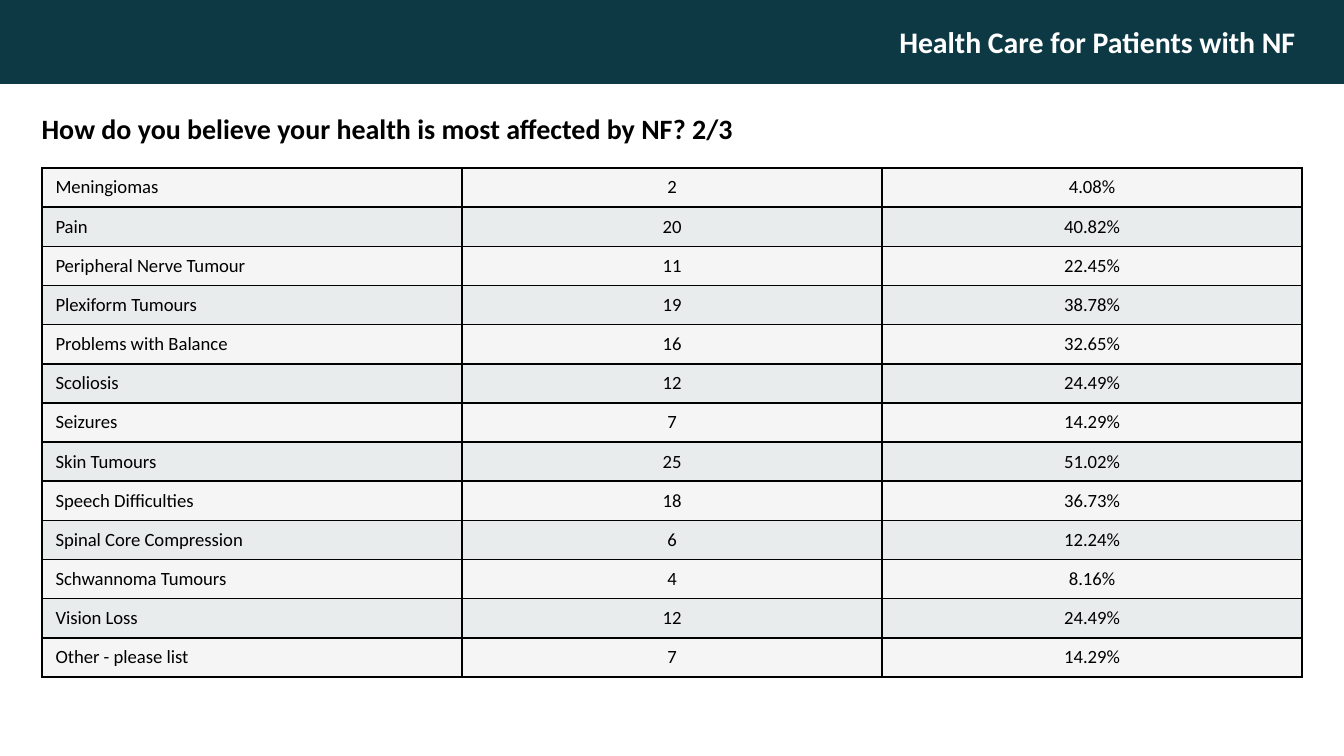
from dataclasses import dataclass

from lxml.etree import SubElement
from pptx import Presentation
from pptx.dml.color import RGBColor
from pptx.enum.shapes import MSO_SHAPE
from pptx.enum.text import MSO_ANCHOR, PP_ALIGN
from pptx.oxml.ns import qn
from pptx.util import Inches, Pt

WIDE = Inches(10)
HIGH = WIDE * 9 // 16
FONT = "Calibri"
HEX = {"band": "0D3944", "odd": "F5F5F5", "even": "E8ECED",
       "ink": "000000", "page": "FFFFFF"}
TOTAL = 49  # people who answered


@dataclass
class Answer:
    label: str
    count: int

    def texts(self) -> list[str]:
        return [self.label, str(self.count), f"{self.count / TOTAL:.2%}"]


@dataclass
class Box:
    """A place on the slide, in percent of its width and height."""
    left: float
    top: float
    width: float
    height: float

    def place(self) -> list[int]:
        return [round(self.left * WIDE / 100), round(self.top * HIGH / 100),
                round(self.width * WIDE / 100), round(self.height * HIGH / 100)]


BAND = Box(0, 0, 100, 11.11)
HEAD = Box(2.1, 13.8, 95.8, 9.24)
GRID = Box(3.13, 22.22, 93.75, 67.4)
ANSWERS = [
    Answer("Meningiomas", 2),
    Answer("Pain", 20),
    Answer("Peripheral Nerve Tumour", 11),
    Answer("Plexiform Tumours", 19),
    Answer("Problems with Balance", 16),
    Answer("Scoliosis", 12),
    Answer("Seizures", 7),
    Answer("Skin Tumours", 25),
    Answer("Speech Difficulties", 18),
    Answer("Spinal Core Compression", 6),
    Answer("Schwannoma Tumours", 4),
    Answer("Vision Loss", 12),
    Answer("Other - please list", 7),
]


def color(name: str) -> RGBColor:
    return RGBColor.from_string(HEX[name])


def write(frame, text: str, size: float, ink: str, align, bold: bool = False) -> None:
    frame.text = text
    line = frame.paragraphs[0]
    line.alignment = align
    for run in line.runs:
        font = run.font
        font.name, font.size, font.bold = FONT, Pt(size), bold
        font.color.rgb = color(ink)


def draw_band(slide, text: str) -> None:
    band = slide.shapes.add_shape(MSO_SHAPE.RECTANGLE, *BAND.place())
    band.shadow.inherit = False
    band.fill.solid()
    band.fill.fore_color.rgb = color("band")
    band.line.fill.background()
    frame = band.text_frame
    frame.vertical_anchor = MSO_ANCHOR.MIDDLE
    frame.margin_right = Inches(0.36)
    write(frame, text, 16, "page", PP_ALIGN.RIGHT, True)


def draw_title(slide, text: str) -> None:
    title = slide.shapes.title
    title.left, title.top, title.width, title.height = HEAD.place()
    frame = title.text_frame
    frame.vertical_anchor = MSO_ANCHOR.TOP
    write(frame, text, 15, "ink", PP_ALIGN.LEFT, True)


def add_edges(cell) -> None:
    # Borders must come before the fill in the cell's properties
    props = cell._tc.get_or_add_tcPr()
    for side in ("lnL", "lnR", "lnT", "lnB"):
        edge = SubElement(props, qn(f"a:{side}"), w=str(Pt(1)))
        fill = SubElement(edge, qn("a:solidFill"))
        SubElement(fill, qn("a:srgbClr"), val=HEX["ink"])


def draw_cell(cell, text: str, first: bool, fill: str) -> None:
    add_edges(cell)
    cell.fill.solid()
    cell.fill.fore_color.rgb = color(fill)
    cell.vertical_anchor = MSO_ANCHOR.MIDDLE
    cell.margin_left = Inches(0.1) if first else 0
    cell.margin_right = cell.margin_top = cell.margin_bottom = 0
    align = PP_ALIGN.LEFT if first else PP_ALIGN.CENTER
    write(cell.text_frame, text, 10, "ink", align)


def draw_table(slide, answers: list[Answer]) -> None:
    rows, cols = len(answers), len(answers[0].texts())
    table = slide.shapes.add_table(rows, cols, *GRID.place()).table
    table.first_row = table.horz_banding = False
    for r, answer in enumerate(answers):
        fill = "even" if r % 2 else "odd"
        for c, text in enumerate(answer.texts()):
            draw_cell(table.cell(r, c), text, c == 0, fill)


def main() -> None:
    deck = Presentation()
    deck.slide_width, deck.slide_height = WIDE, HIGH
    slide = deck.slides.add_slide(deck.slide_layouts[5])

    # Heading band, question and answers
    draw_band(slide, "Health Care for Patients with NF")
    draw_title(slide, "How do you believe your health is most affected by NF? 2/3")
    draw_table(slide, ANSWERS)

    deck.save("out.pptx")


if __name__ == "__main__":
    main()
